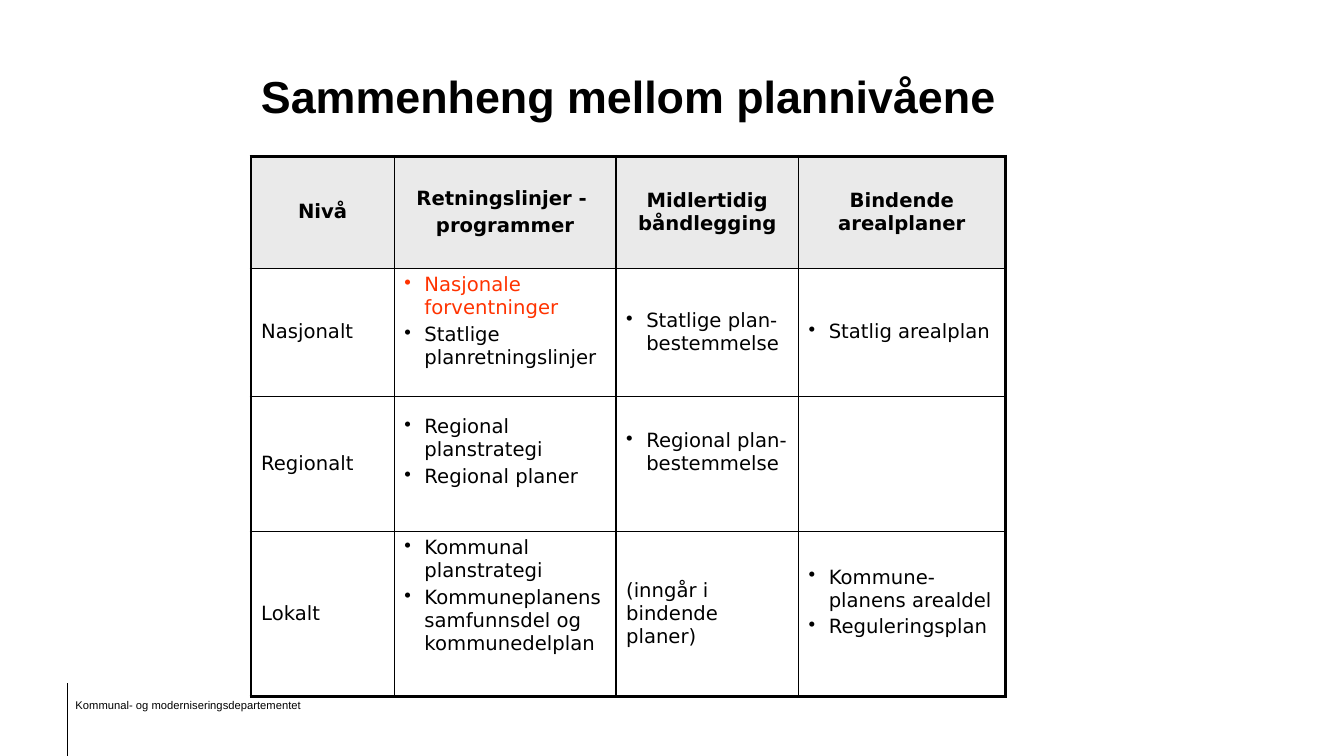
from dataclasses import dataclass

from lxml import etree
from pptx import Presentation
from pptx.dml.color import RGBColor
from pptx.enum.shapes import MSO_CONNECTOR
from pptx.enum.text import MSO_ANCHOR, PP_ALIGN
from pptx.oxml.ns import qn
from pptx.util import Inches, Pt

STRAIGHT = MSO_CONNECTOR.STRAIGHT
TOP, MIDDLE, BOTTOM = MSO_ANCHOR.TOP, MSO_ANCHOR.MIDDLE, MSO_ANCHOR.BOTTOM
LEFT, CENTER = PP_ALIGN.LEFT, PP_ALIGN.CENTER


@dataclass(frozen=True)
class Theme:
    black: str = "000000"
    accent: str = "FF3300"
    header_fill: str = "EAEAEA"
    body_fill: str = "FFFFFF"
    heading_font: str = "Arial"
    table_font: str = "DejaVu Sans"
    title_size: float = 32
    table_size: float = 14
    footer_size: float = 8
    para_gap: float = 2.8
    outer_line: float = 2.25
    inner_line: float = 1
    footer_line: float = 0.75


THEME = Theme()

COLUMNS = [1.42, 2.2, 1.81, 2.05]
ROWS = [1.11, 1.27, 1.34, 1.64]
HEADERS = [["Nivå"], ["Retningslinjer - ", "programmer"],
           ["Midlertidig båndlegging"], ["Bindende arealplaner"]]
LEVELS = [
    [["Nasjonalt"],
     ["Nasjonale forventninger", "Statlige planretningslinjer"],
     ["Statlige plan-bestemmelse"], ["Statlig arealplan"]],
    [["Regionalt"], ["Regional planstrategi", "Regional planer"],
     ["Regional plan-bestemmelse"], []],
    [["Lokalt"],
     ["Kommunal planstrategi", "Kommuneplanens samfunnsdel og kommunedelplan"],
     ["(inngår i bindende planer)"],
     ["Kommune-planens arealdel", "Reguleringsplan"]],
]
PLAIN_CELLS = {(3, 2)}
TOP_CELLS = {(1, 1), (3, 1)}
RAISED_CELLS = {(2, 1), (2, 2), (3, 3)}  # text sits half a line above the middle
ACCENT_TEXT = "Nasjonale forventninger"


def style_span(span, font, size, bold=False, color=THEME.black):
    span.font.name = font
    span.font.size = Pt(size)
    span.font.bold = bold
    span.font.color.rgb = RGBColor.from_string(color)


def add_label(page, box, text, size, bold=False, anchor=TOP, spacing=1.0):
    label = page.shapes.add_textbox(*(Inches(value) for value in box))
    frame = label.text_frame
    frame.word_wrap = True
    frame.vertical_anchor = anchor
    frame.text = text
    para = frame.paragraphs[0]
    para.line_spacing = spacing
    style_span(para.runs[0], THEME.heading_font, size, bold)


def add_footer(page, box):
    left, top, width, height = box
    add_label(page, (left, top + 0.11, width, 0.22),
              "Kommunal- og moderniseringsdepartementet",
              THEME.footer_size, spacing=0.9)
    rule_x = Inches(left + 0.02)
    rule = page.shapes.add_connector(
        STRAIGHT, rule_x, Inches(top), rule_x, Inches(top + height))
    rule.line.color.rgb = RGBColor.from_string(THEME.black)
    rule.line.width = Pt(THEME.footer_line)
    etree.SubElement(rule._element.spPr, qn("a:effectLst"))


def set_borders(cell, row, column):
    outer_edges = {"L": column == 0, "R": column == len(COLUMNS) - 1,
                   "T": row == 0, "B": row == len(ROWS) - 1}
    properties = cell._tc.get_or_add_tcPr()
    for side, outer in outer_edges.items():
        width = THEME.outer_line if outer else THEME.inner_line
        edge = etree.SubElement(properties, qn(f"a:ln{side}"), w=str(Pt(width)))
        fill = etree.SubElement(edge, qn("a:solidFill"))
        etree.SubElement(fill, qn("a:srgbClr"), val=THEME.black)


def add_bullet(para):
    properties = para._p.get_or_add_pPr()
    properties.set("marL", str(Inches(0.2)))
    properties.set("indent", str(Inches(-0.2)))
    etree.SubElement(properties, qn("a:buChar"), char="•")


def fill_cell(cell, row, column, lines):
    header = row == 0
    place = (row, column)
    set_borders(cell, row, column)
    cell.fill.solid()
    cell.fill.fore_color.rgb = RGBColor.from_string(
        THEME.header_fill if header else THEME.body_fill)
    cell.vertical_anchor = TOP if place in TOP_CELLS else MIDDLE
    if place in RAISED_CELLS:
        cell.margin_bottom = Inches(0.28)

    frame = cell.text_frame
    for index, line in enumerate(lines):
        para = frame.add_paragraph() if index else frame.paragraphs[0]
        para.text = line
        para.alignment = CENTER if header else LEFT
        if index:
            para.space_before = Pt(THEME.para_gap)
        if not header and column > 0 and place not in PLAIN_CELLS:
            add_bullet(para)
        color = THEME.accent if line == ACCENT_TEXT else THEME.black
        style_span(para.runs[0], THEME.table_font, THEME.table_size, header, color)


def add_plan_table(page, left, top):
    table = page.shapes.add_table(
        len(ROWS), len(COLUMNS), Inches(left), Inches(top),
        Inches(sum(COLUMNS)), Inches(sum(ROWS))).table
    table.first_row = False
    table.horz_banding = False
    for column, width in zip(table.columns, COLUMNS):
        column.width = Inches(width)
    for row, height in zip(table.rows, ROWS):
        row.height = Inches(height)
    for row, cells in enumerate([HEADERS] + LEVELS):
        for column, lines in enumerate(cells):
            fill_cell(table.cell(row, column), row, column, lines)


def build_plan_slide(deck):
    page = deck.slides.add_slide(deck.slide_layouts[6])
    add_footer(page, (0.65, 6.78, 2.83, 0.72))
    add_label(page, (2.49, 0.68, 8.03, 0.58), "Sammenheng mellom plannivåene",
              THEME.title_size, bold=True, anchor=BOTTOM)
    add_plan_table(page, 2.49, 1.55)


def main():
    deck = Presentation()
    deck.slide_width = Inches(13.33)
    deck.slide_height = Inches(7.5)
    build_plan_slide(deck)
    deck.save("out.pptx")


if __name__ == "__main__":
    main()
